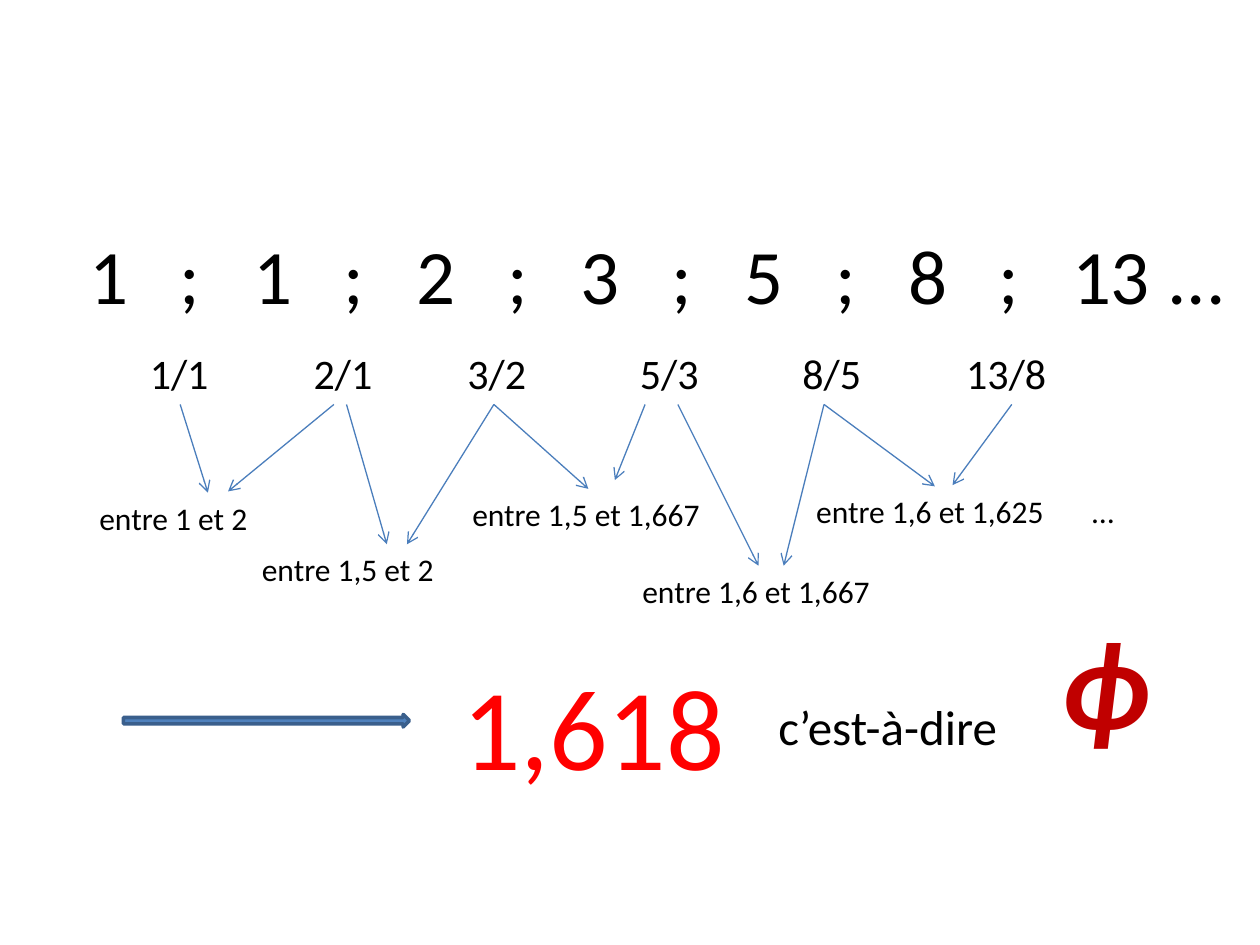
import pptx
import pptx.util
import pptx.dml.color
import pptx.enum.shapes
import pptx.enum.text
import pptx.oxml
import pptx.oxml.ns
import lxml.etree

Inches, Pt = pptx.util.Inches, pptx.util.Pt
rgb = pptx.dml.color.RGBColor.from_string
qn = pptx.oxml.ns.qn

theme = {
    "font": "Calibri",
    "ink": "000000", "red": "FF0000", "dark": "C00000",
    "line": "4B7EBC", "fill": "4F81BD", "edge": "3A5F8C",
    "terms": 44, "ratio": 24, "label": 18, "value": 66, "phi": 72, "note": 28,
}

deck = pptx.Presentation()
deck.slide_width, deck.slide_height = Inches(10), Inches(7.5)
slide = deck.slides.add_slide(deck.slide_layouts[6])


def write(text, x, y, w, h, size, color="ink", bold=False, italic=False, wrap=True, tabs=()):
    box = slide.shapes.add_textbox(Inches(x), Inches(y), Inches(w), Inches(h))
    frame = box.text_frame
    frame.word_wrap = wrap
    frame.auto_size = pptx.enum.text.MSO_AUTO_SIZE.SHAPE_TO_FIT_TEXT
    para = frame.paragraphs[0]
    run = para.add_run()
    run.text = text
    font = run.font
    font.name, font.size = theme["font"], Pt(theme[size])
    font.color.rgb = rgb(theme[color])
    font.bold, font.italic = bold, italic
    if tabs:
        stops = lxml.etree.SubElement(para._p.get_or_add_pPr(), qn("a:tabLst"))
        for tab in tabs:
            lxml.etree.SubElement(stops, qn("a:tab"), pos=str(Inches(tab)), algn="l")


terms = ["1", "1", "2", "3", "5", "8", "13 ..."]
step = 1.3
stops = [pos for k in range(6) for pos in (k * step + 0.72, (k + 1) * step)]
write("\t;\t".join(terms), 0.61, 1.76, 9.65, 0.84, "terms", tabs=stops)

ratios = ["1/1", "2/1", "3/2", "5/3", "8/5", "13/8"]
write("\t" + "\t".join(ratios), 0.94, 2.71, 8.35, 0.5, "ratio",
      tabs=[0.15, 1.45, 2.67, 4.04, 5.33, 6.63])

labels = [
    ("entre 1 et 2", 0.69, 3.91, 1.39),
    ("entre 1,5 et 2", 1.98, 4.32, 1.58),
    ("entre 1,5 et 1,667", 3.65, 3.88, 2.03),
    ("entre 1,6 et 1,667", 5, 4.49, 2.03),
]
for text, x, y, w in labels:
    write(text, x, y, w, 0.4, "label", wrap=False)
write("entre 1,6 et 1,625\t…", 6.38, 3.86, 2.9, 0.4, "label", tabs=[2.19])

arrows = [
    (1.43, 1.65, 3.91), (2.65, 1.81, 3.9),
    (2.75, 3.07, 4.32), (3.92, 3.23, 4.32),
    (3.92, 4.67, 3.88), (5.12, 4.88, 3.81),
    (5.38, 6.02, 4.49), (6.54, 6.22, 4.49),
    (6.54, 7.42, 3.86), (8.03, 7.56, 3.85),
]
for start, end, low in arrows:
    link = slide.shapes.add_connector(
        pptx.enum.shapes.MSO_CONNECTOR.STRAIGHT,
        Inches(start), Inches(3.21), Inches(end), Inches(low))
    link.line.color.rgb = rgb(theme["line"])
    link.line.width = Pt(0.75)
    lxml.etree.SubElement(link.line._get_or_add_ln(), qn("a:tailEnd"), type="arrow")
    lxml.etree.SubElement(link._element.spPr, qn("a:effectLst"))

limit = slide.shapes.add_shape(
    pptx.enum.shapes.MSO_SHAPE.RIGHT_ARROW,
    Inches(0.98), Inches(5.67), Inches(2.27), Inches(0.1))
limit.shadow.inherit = False
limit.fill.solid()
limit.fill.fore_color.rgb = rgb(theme["fill"])
limit.line.color.rgb = rgb(theme["edge"])
limit.line.width = Pt(2)

write("1,618", 3.57, 5.15, 2.44, 1.21, "value", color="red")
write("ϕ", 8.33, 4.74, 0.94, 1.31, "phi", color="dark", bold=True, italic=True)
write("c’est-à-dire", 6.08, 5.48, 2.32, 0.57, "note")

deck.save("out.pptx")
